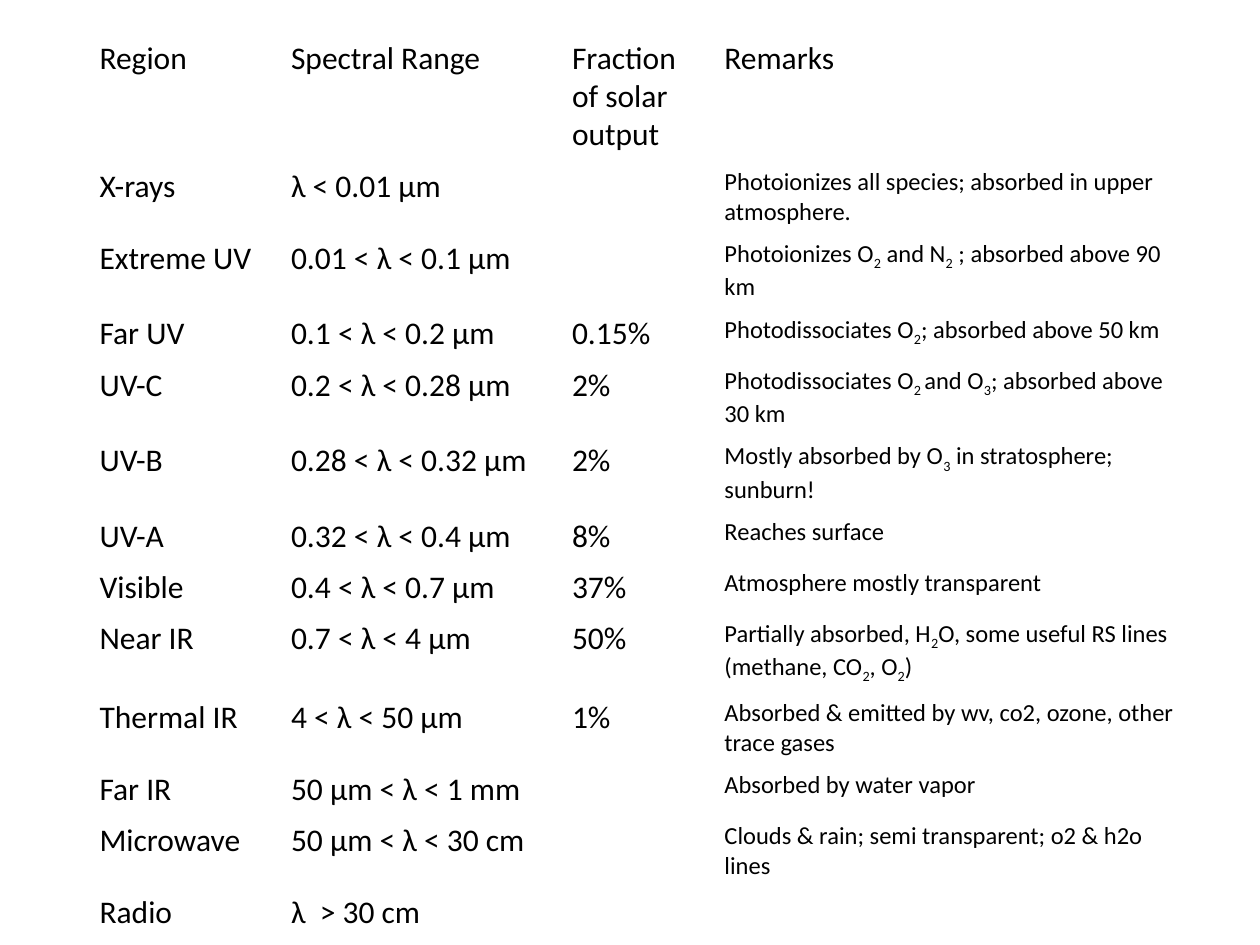
from pptx import Presentation
from pptx.dml.color import RGBColor
from pptx.util import Inches, Pt

BLANK_LAYOUT = 6
SUBSCRIPT_MARK = "|"
SUBSCRIPT_BASELINE = "-25000"

COLUMN_WIDTHS = [1.52, 2.23, 1.21, 3.87]
HEADER_HEIGHT = 0.97
ROW_HEIGHT = 0.4

HEADERS = ("Region", "Spectral Range", "Fraction of solar output", "Remarks")
REGIONS = [
    ("X-rays", "λ < 0.01 μm", "", "Photoionizes all species; absorbed in upper atmosphere."),
    ("Extreme UV", "0.01 < λ < 0.1 μm", "", "Photoionizes O|2| and N|2| ; absorbed above 90 km"),
    ("Far UV", "0.1 < λ < 0.2 μm", "0.15%", "Photodissociates O|2|; absorbed above 50 km"),
    ("UV-C", "0.2 < λ < 0.28 μm", "2%", "Photodissociates O|2 |and O|3|; absorbed above 30 km"),
    ("UV-B", "0.28 < λ < 0.32 μm", "2%", "Mostly absorbed by O|3| in stratosphere; sunburn!"),
    ("UV-A", "0.32 < λ < 0.4 μm", "8%", "Reaches surface"),
    ("Visible", "0.4 < λ < 0.7 μm", "37%", "Atmosphere mostly transparent"),
    ("Near IR", "0.7 < λ < 4 μm", "50%",
     "Partially absorbed, H|2|O, some useful RS lines (methane, CO|2|, O|2|)"),
    ("Thermal IR", "4 < λ < 50 μm", "1%",
     "Absorbed & emitted by wv, co2, ozone, other trace gases"),
    ("Far IR", "50 μm < λ < 1 mm", "", "Absorbed by water vapor"),
    ("Microwave", "50 μm < λ < 30 cm", "", "Clouds & rain; semi transparent; o2 & h2o lines"),
    ("Radio", "λ  > 30 cm", "", ""),
]


def color(hex_string):
    return RGBColor.from_string(hex_string)


class SlideBuilder:
    font = "Calibri"
    ink = "000000"
    body_size = 18
    remark_size = 14

    def __init__(self, page):
        self.page = page

    def table(self, left, top, widths, heights, rows):
        frame = self.page.shapes.add_table(
            len(rows), len(widths), Inches(left), Inches(top),
            Inches(sum(widths)), Inches(sum(heights)))
        table = frame.table
        table.first_row = False
        table.horz_banding = False
        for column, width in zip(table.columns, widths):
            column.width = Inches(width)
        for row, height in zip(table.rows, heights):
            row.height = Inches(height)
        remarks_column = len(widths) - 1
        for row_index, texts in enumerate(rows):
            for column_index, text in enumerate(texts):
                is_remark = row_index > 0 and column_index == remarks_column
                size = self.remark_size if is_remark else self.body_size
                self.cell(table.cell(row_index, column_index), text, size)

    def cell(self, cell, text, size):
        cell.fill.background()
        if not text:
            return
        para = cell.text_frame.paragraphs[0]
        for index, part in enumerate(text.split(SUBSCRIPT_MARK)):
            span = para.add_run()
            span.text = part
            span.font.name = self.font
            span.font.size = Pt(size)
            span.font.color.rgb = color(self.ink)
            if index % 2:
                span.font._element.set("baseline", SUBSCRIPT_BASELINE)


def main():
    deck = Presentation()
    deck.slide_width = Inches(10)
    deck.slide_height = Inches(7.5)
    page = deck.slides.add_slide(deck.slide_layouts[BLANK_LAYOUT])
    heights = [HEADER_HEIGHT] + [ROW_HEIGHT] * len(REGIONS)
    SlideBuilder(page).table(0.69, 0.26, COLUMN_WIDTHS, heights, [HEADERS] + REGIONS)
    deck.save("out.pptx")


if __name__ == "__main__":
    main()
